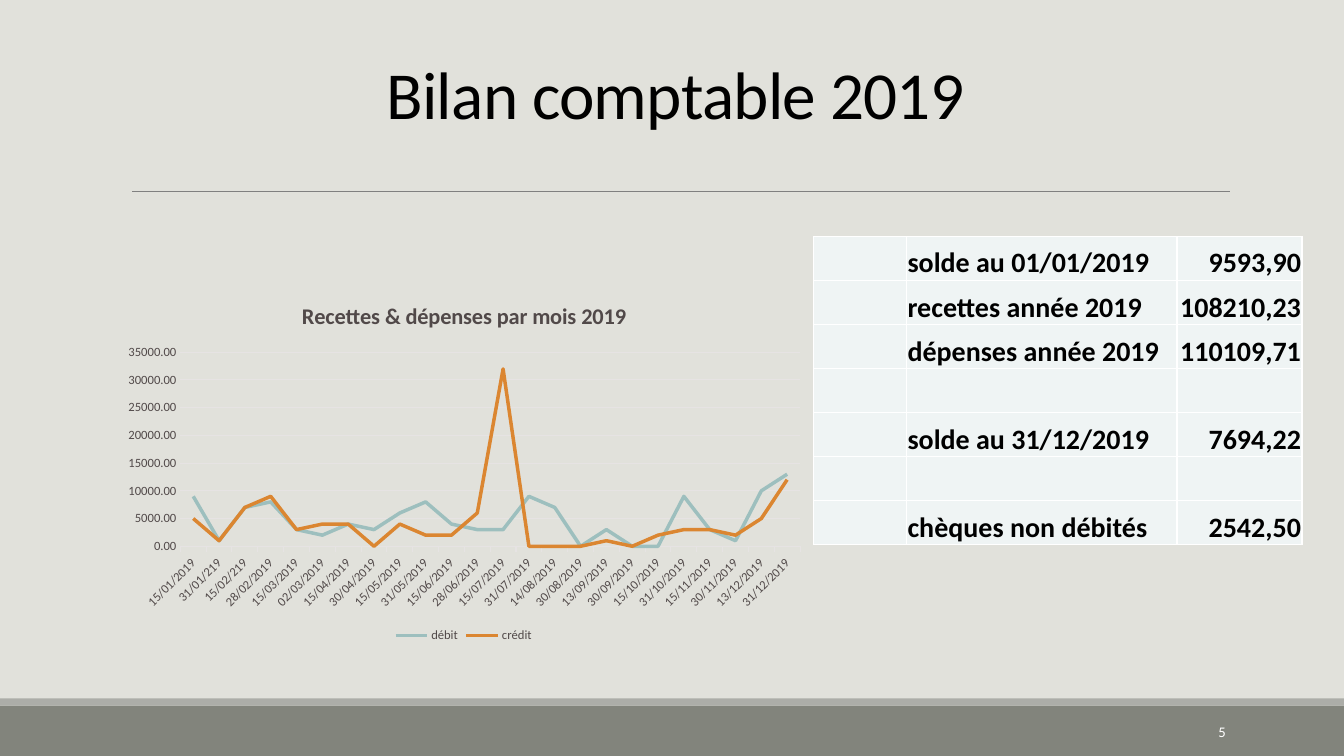
from lxml import etree
from pptx import Presentation
from pptx.chart.data import CategoryChartData
from pptx.dml.color import RGBColor
from pptx.enum.chart import XL_CHART_TYPE, XL_LEGEND_POSITION, XL_TICK_MARK
from pptx.enum.shapes import MSO_CONNECTOR, MSO_SHAPE
from pptx.enum.text import MSO_ANCHOR, PP_ALIGN
from pptx.oxml import parse_xml
from pptx.oxml.ns import nsdecls, qn
from pptx.util import Cm, Pt

LINE_CHART = XL_CHART_TYPE.LINE
LEGEND_BOTTOM = XL_LEGEND_POSITION.BOTTOM
TICK_NONE, TICK_OUT = XL_TICK_MARK.NONE, XL_TICK_MARK.OUTSIDE
STRAIGHT, RECTANGLE = MSO_CONNECTOR.STRAIGHT, MSO_SHAPE.RECTANGLE
BOTTOM, MIDDLE = MSO_ANCHOR.BOTTOM, MSO_ANCHOR.MIDDLE
LEFT, CENTER, RIGHT = PP_ALIGN.LEFT, PP_ALIGN.CENTER, PP_ALIGN.RIGHT

FONT = "Calibri"
COLORS = {
    "background": "E1E1DB", "footer": "82847C", "strip": "ACADA8",
    "rule": "808080", "black": "000000", "white": "FFFFFF",
    "cell": "EFF4F4", "label": "514949", "grid": "E6E3E3",
    "débit": "9DBFBE", "crédit": "DB8631",
}
TITLE = "Bilan comptable 2019"
PAGE_NUMBER = "5"
CHART_TITLE = "Recettes & dépenses par mois 2019"
DATES = [
    "15/01/2019", "31/01/219", "15/02/219", "28/02/2019", "15/03/2019", "02/03/2019",
    "15/04/2019", "30/04/2019", "15/05/2019", "31/05/2019", "15/06/2019", "28/06/2019",
    "15/07/2019", "31/07/2019", "14/08/2019", "30/08/2019", "13/09/2019", "30/09/2019",
    "15/10/2019", "31/10/2019", "15/11/2019", "30/11/2019", "13/12/2019", "31/12/2019",
]
SERIES = {
    "débit": [9000, 1000, 7000, 8000, 3000, 2000, 4000, 3000, 6000, 8000, 4000, 3000,
              3000, 9000, 7000, 0, 3000, 0, 0, 9000, 3000, 1000, 10000, 13000],
    "crédit": [5000, 1000, 7000, 9000, 3000, 4000, 4000, 0, 4000, 2000, 2000, 6000,
               32000, 0, 0, 0, 1000, 0, 2000, 3000, 3000, 2000, 5000, 12000],
}
BALANCE = [
    ("", "solde au 01/01/2019", "9593,90"),
    ("", "recettes année 2019", "108210,23"),
    ("", "dépenses année 2019", "110109,71"),
    ("", "", ""),
    ("", "solde au 31/12/2019", "7694,22"),
    ("", "", ""),
    ("", "chèques non débités", "2542,50"),
]
COLUMN_WIDTHS = [2.34, 6.81, 3.15]
COLUMN_ALIGNS = [LEFT, LEFT, RIGHT]
ROW_HEIGHT = 1.11
BARS = [("footer", 17.78, 1.27), ("strip", 17.6, 0.18)]
SLIDE_WIDTH, SLIDE_HEIGHT = 33.87, 19.05


def rgb(name):
    return RGBColor.from_string(COLORS[name])


def set_font(font, size, color, bold=False):
    values = {"name": FONT, "size": Pt(size), "bold": bold}
    for key, value in values.items():
        setattr(font, key, value)
    font.color.rgb = rgb(color)


def set_line(line, color, width):
    line.color.rgb = rgb(color)
    line.width = Pt(width)


def add_text(slide, text, box, size, color, align, anchor):
    tf = slide.shapes.add_textbox(*map(Cm, box)).text_frame
    tf.word_wrap = True
    tf.vertical_anchor = anchor
    p = tf.paragraphs[0]
    p.alignment = align
    r = p.add_run()
    r.text = text
    set_font(r.font, size, color)
    return p


def set_layout(parent, after, target, **place):
    old = parent.find(qn("c:layout"))
    if old is not None:
        parent.remove(old)
    inner = f'<c:layoutTarget val="{target}"/>' if target else ""
    modes = "".join(f'<c:{k}Mode val="edge"/>' for k in "xy")
    sizes = "".join(f'<c:{k} val="{v}"/>' for k, v in place.items())
    layout = parse_xml(
        f'<c:layout {nsdecls("c")}><c:manualLayout>{inner}{modes}{sizes}'
        "</c:manualLayout></c:layout>")
    if after is None:
        parent.insert(0, layout)
    else:
        after.addnext(layout)


def add_frame(slide):
    fill = slide.background.fill
    fill.solid()
    fill.fore_color.rgb = rgb("background")
    for name, top, height in BARS:
        sp = slide.shapes.add_shape(
            RECTANGLE, 0, Cm(top), Cm(SLIDE_WIDTH), Cm(height))
        sp.shadow.inherit = False
        sp.fill.solid()
        sp.fill.fore_color.rgb = rgb(name)
        sp.line.fill.background()
    rule = slide.shapes.add_connector(STRAIGHT, Cm(3.33), Cm(4.83), Cm(31), Cm(4.83))
    set_line(rule.line, "rule", 0.5)
    etree.SubElement(rule._element.spPr, qn("a:effectLst"))


def add_line_chart(slide):
    data = CategoryChartData(number_format="0.00")
    data.categories = DATES
    for name, values in SERIES.items():
        data.add_series(name, values)
    chart = slide.shapes.add_chart(
        LINE_CHART, Cm(2.87), Cm(7.16), Cm(17.63), Cm(9.14), data).chart
    set_font(chart.font, 10, "black")

    chart.has_title = True
    p = chart.chart_title.text_frame.paragraphs[0]
    r = p.add_run()
    r.text = CHART_TITLE
    set_font(r.font, 16, "label", True)
    title = chart.chart_title._element
    set_layout(title, title.find(qn("c:tx")), "", x=0.263, y=0.036)
    plot_area = chart._chartSpace.chart.plotArea
    set_layout(plot_area, None, "inner", x=0.095, y=0.188, w=0.886, h=0.535)

    chart.has_legend = True
    chart.legend.position = LEGEND_BOTTOM
    chart.legend.include_in_layout = False
    set_font(chart.legend.font, 9, "label")

    dates, amounts = chart.category_axis, chart.value_axis
    for axis, tick in ((dates, TICK_OUT), (amounts, TICK_NONE)):
        axis.major_tick_mark = tick
        axis.minor_tick_mark = TICK_NONE
        set_font(axis.tick_labels.font, 9, "label")
    set_line(dates.format.line, "grid", 0.75)
    dates._element.find(qn("c:txPr")).find(qn("a:bodyPr")).set("rot", "-2700000")
    amounts.format.line.fill.background()
    amounts.minimum_scale, amounts.maximum_scale = 0, 35000
    amounts.major_unit = 5000
    amounts.tick_labels.number_format = "0.00"
    amounts.tick_labels.number_format_is_linked = False
    set_line(amounts.major_gridlines.format.line, "grid", 0.75)

    plot = chart.plots[0]
    plot.vary_by_categories = False
    for series in plot.series:
        series.smooth = False
        set_line(series.format.line, series.name, 2.5)


def format_cell(cell, text, align):
    margins = {"margin_left": 0.02, "margin_right": 0.02,
               "margin_top": 0.02, "margin_bottom": 0}
    for key, value in margins.items():
        setattr(cell, key, Cm(value))
    cell.vertical_anchor = BOTTOM
    cell.text = text
    p = cell.text_frame.paragraphs[0]
    p.alignment = align
    set_font(p.font, 20, "black", True)
    for r in p.runs:
        set_font(r.font, 20, "black", True)
    for side in ("lnL", "lnR", "lnT", "lnB"):
        cell._tc.get_or_add_tcPr().append(parse_xml(
            f'<a:{side} {nsdecls("a")} w="12700"><a:solidFill>'
            f'<a:srgbClr val="{COLORS["white"]}"/></a:solidFill></a:{side}>'))
    cell.fill.solid()
    cell.fill.fore_color.rgb = rgb("cell")


def add_balance_table(slide):
    rows, cols = len(BALANCE), len(COLUMN_WIDTHS)
    table = slide.shapes.add_table(
        rows, cols, Cm(20.51), Cm(5.96),
        Cm(sum(COLUMN_WIDTHS)), Cm(rows * ROW_HEIGHT)).table
    table.first_row = table.horz_banding = False
    for column, width in zip(table.columns, COLUMN_WIDTHS):
        column.width = Cm(width)
    for i, texts in enumerate(BALANCE):
        table.rows[i].height = Cm(ROW_HEIGHT)
        for j, (text, align) in enumerate(zip(texts, COLUMN_ALIGNS)):
            format_cell(table.cell(i, j), text, align)


def main():
    prs = Presentation()
    prs.slide_width, prs.slide_height = Cm(SLIDE_WIDTH), Cm(SLIDE_HEIGHT)
    slide = prs.slides.add_slide(prs.slide_layouts[6])
    add_frame(slide)
    p = add_text(slide, TITLE, (3.05, 0.79, 27.94, 2.69), 48, "black", CENTER, BOTTOM)
    p.line_spacing = 0.85
    p.runs[0].font._element.set("spc", "-50")
    add_text(slide, PAGE_NUMBER, (27.51, 17.93, 3.63, 1.02), 10.5, "white", RIGHT, MIDDLE)
    add_line_chart(slide)
    add_balance_table(slide)
    prs.save("out.pptx")


if __name__ == "__main__":
    main()
